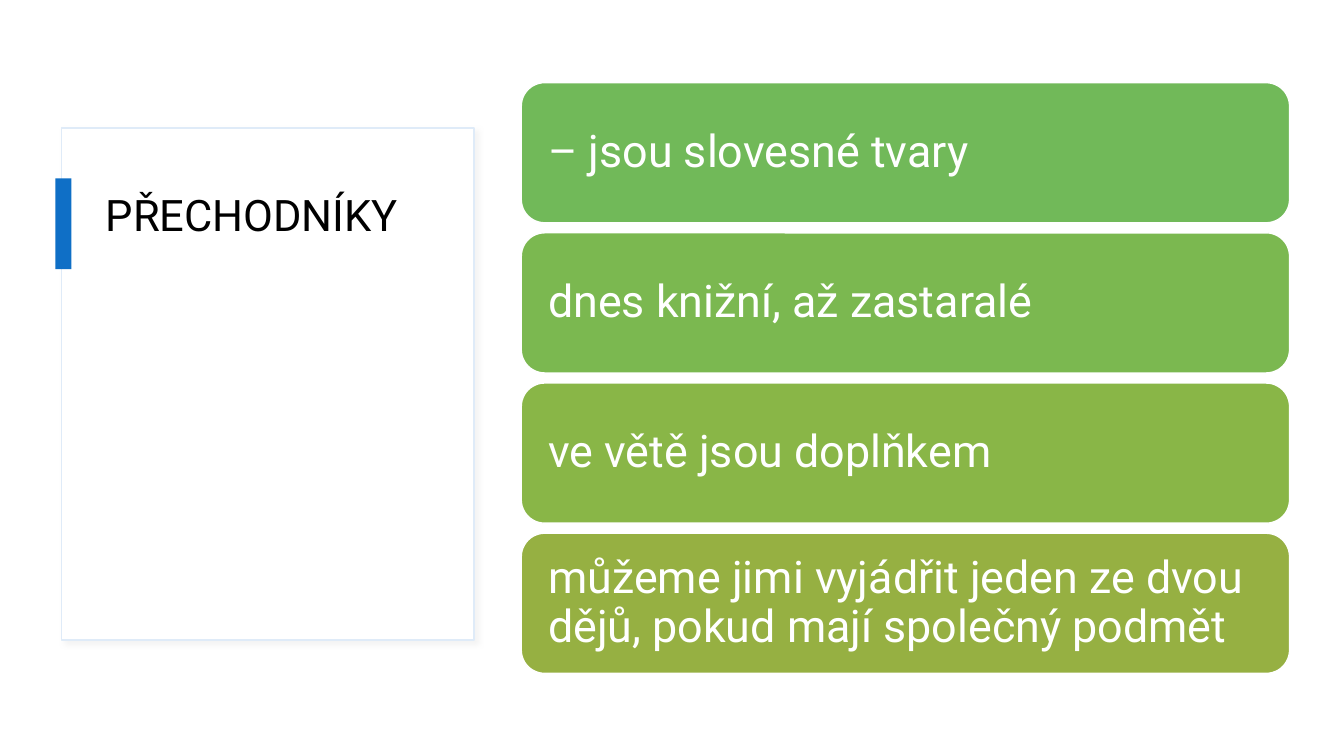
from lxml import etree
from pptx import Presentation
from pptx.dml.color import RGBColor
from pptx.enum import shapes, text
from pptx.oxml import ns
from pptx.util import Inches, Pt

WHITE = RGBColor(0xFF, 0xFF, 0xFF)
BLACK = RGBColor(0x00, 0x00, 0x00)
PALE_BLUE = RGBColor(0xDF, 0xEB, 0xF8)
BLUE = RGBColor(0x0F, 0x6F, 0xC6)
SHADOW_GREY = RGBColor(0xD9, 0xD9, 0xD9)
FONT = "Roboto"

CARDS = [
    ("– jsou slovesné tvary", RGBColor(0x71, 0xB9, 0x59)),
    ("dnes knižní, až zastaralé", RGBColor(0x7B, 0xB8, 0x50)),
    ("ve větě jsou doplňkem", RGBColor(0x89, 0xB6, 0x47)),
    ("můžeme jimi vyjádřit jeden ze dvou dějů, pokud mají společný podmět",
     RGBColor(0x96, 0xB0, 0x42)),
]
CARD_TOP = 0.82
CARD_STEP = 1.49


def set_all(target, values):
    for name, value in values.items():
        setattr(target, name, value)


def add_block(page, kind, bounds, fill, line=None):
    shape = page.shapes.add_shape(kind, *map(Inches, bounds))
    shape.shadow.inherit = False
    shape.fill.solid()
    shape.fill.fore_color.rgb = fill
    if line is None:
        shape.line.fill.background()
    else:
        shape.line.color.rgb = line
        shape.line.width = Pt(1)
    return shape


def add_soft_shadow(shape):
    effects = shape._element.spPr.find(ns.qn("a:effectLst"))
    shadow = etree.SubElement(effects, ns.qn("a:outerShdw"), {
        "blurRad": str(Pt(4)), "dist": str(Pt(3)),
        "dir": str(45 * 60000), "algn": "tl", "rotWithShape": "0"})
    color = etree.SubElement(shadow, ns.qn("a:srgbClr"), val=str(SHADOW_GREY))
    etree.SubElement(color, ns.qn("a:alpha"), val="30000")


def write_text(box, words, size, color, frame_format):
    frame = box.text_frame
    set_all(frame, {"word_wrap": True, **frame_format})
    para = frame.paragraphs[0]
    set_all(para, {"alignment": text.PP_ALIGN.LEFT, "line_spacing": 0.9})
    span = para.add_run()
    span.text = words
    set_all(span.font, {"name": FONT, "size": Pt(size)})
    span.font.color.rgb = color


def add_title_panel(page):
    rectangle = shapes.MSO_SHAPE.RECTANGLE
    panel = add_block(page, rectangle, (0.61, 1.27, 4.09, 5.08), WHITE, PALE_BLUE)
    add_soft_shadow(panel)
    title = page.shapes.add_textbox(*map(Inches, (0.95, 1.88, 3.39, 3.85)))
    write_text(title, "PŘECHODNÍKY", 31, BLACK,
               {"vertical_anchor": text.MSO_ANCHOR.TOP})
    add_block(page, rectangle, (0.55, 1.77, 0.16, 0.9), BLUE)


def add_card(page, top, words, fill):
    card = add_block(page, shapes.MSO_SHAPE.ROUNDED_RECTANGLE,
                     (5.17, top, 7.62, 1.39), fill, WHITE)
    write_text(card, words, 32, WHITE, {
        "vertical_anchor": text.MSO_ANCHOR.MIDDLE,
        "margin_left": Inches(0.2), "margin_right": Inches(0.2),
        "margin_top": Inches(0.2), "margin_bottom": Inches(0.2)})


def main():
    deck = Presentation()
    set_all(deck, {"slide_width": Inches(13.33), "slide_height": Inches(7.5)})
    page = deck.slides.add_slide(deck.slide_layouts[6])
    add_title_panel(page)
    for index, (words, fill) in enumerate(CARDS):
        add_card(page, CARD_TOP + index * CARD_STEP, words, fill)
    deck.save("out.pptx")


if __name__ == "__main__":
    main()
